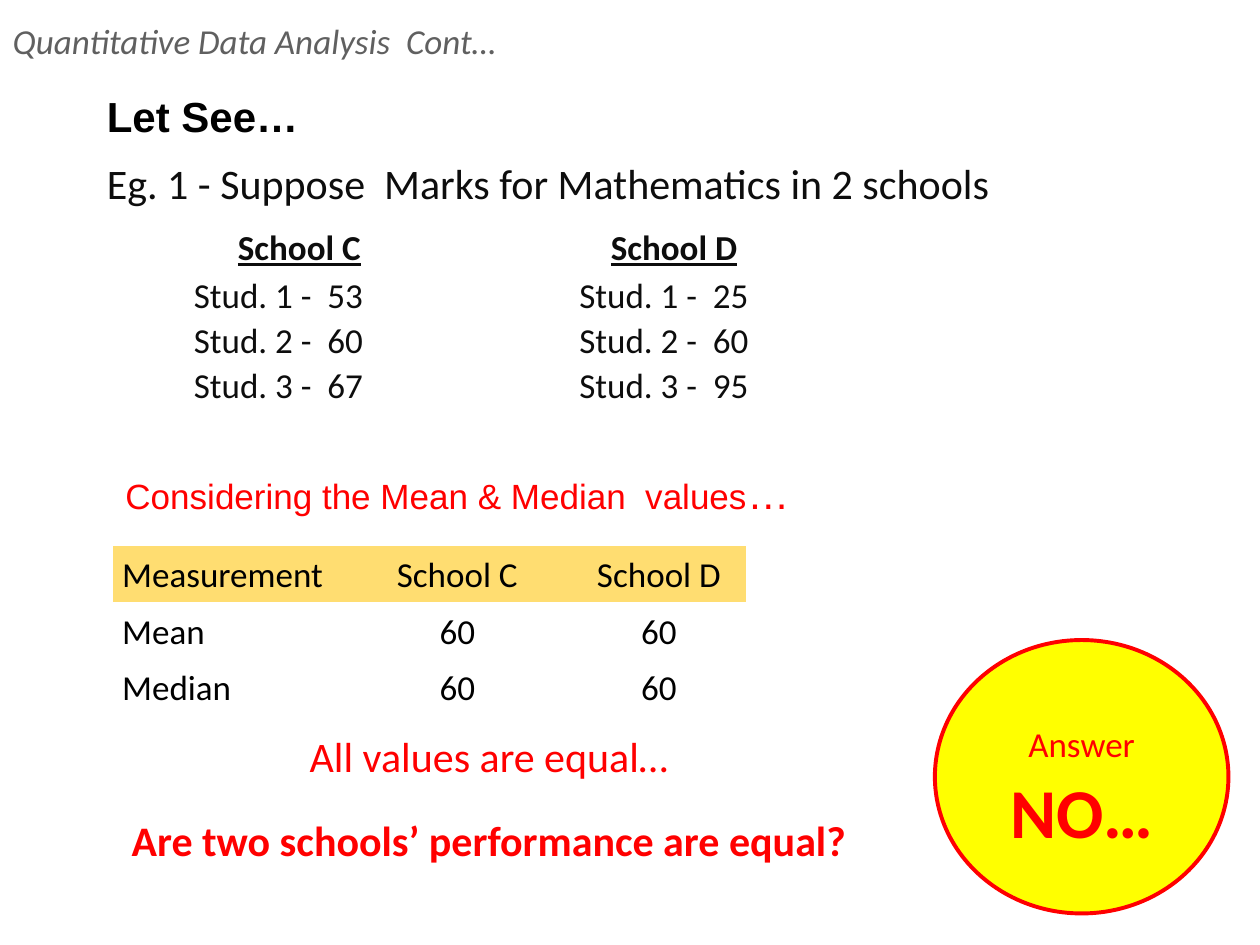
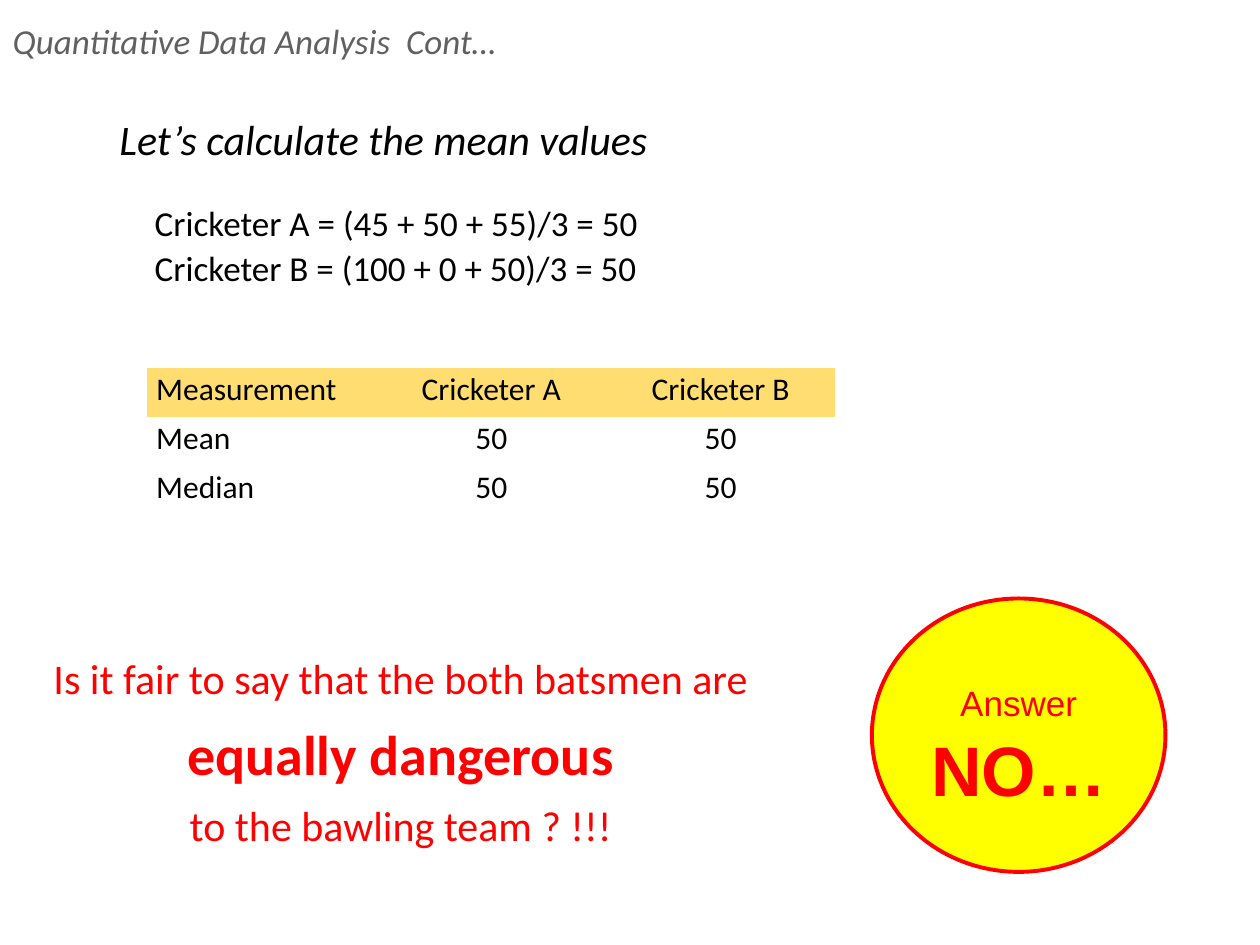
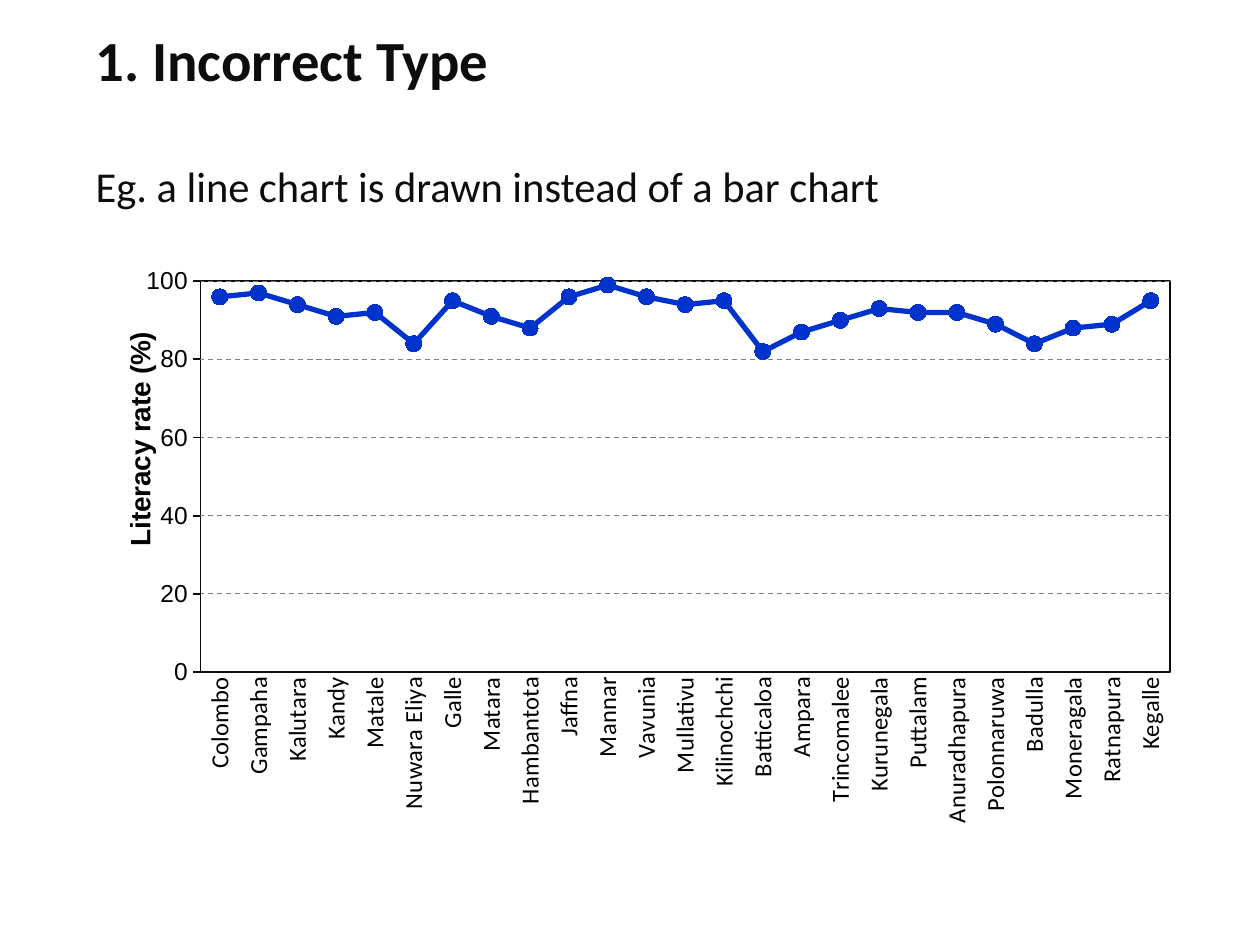
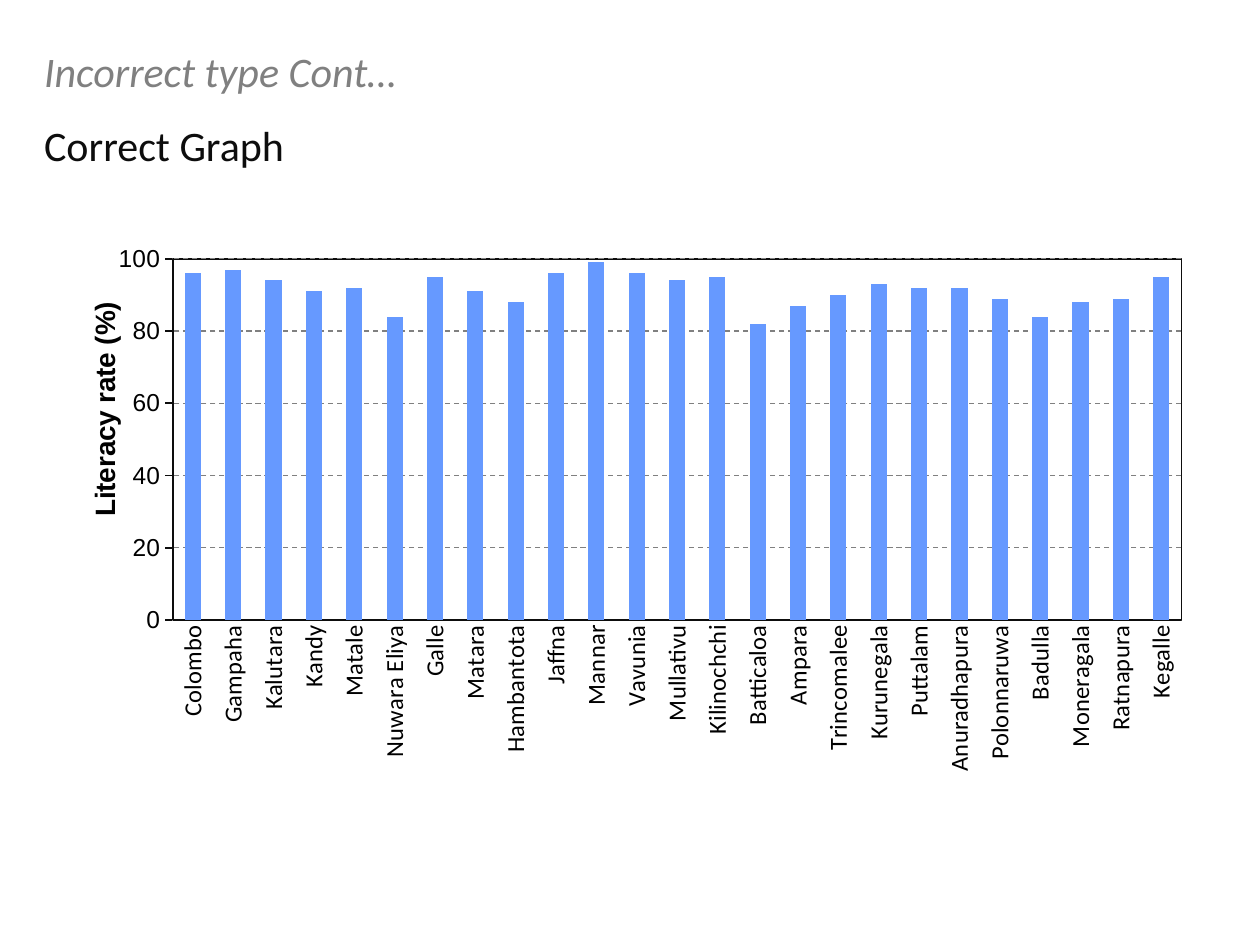
from dataclasses import dataclass

from lxml import etree
from pptx import Presentation
from pptx.chart.data import CategoryChartData
from pptx.dml.color import RGBColor
from pptx.enum.chart import XL_CHART_TYPE, XL_MARKER_STYLE, XL_TICK_MARK
from pptx.enum.dml import MSO_LINE
from pptx.enum.shapes import MSO_SHAPE
from pptx.enum.text import MSO_ANCHOR, MSO_AUTO_SIZE, PP_ALIGN
from pptx.oxml.ns import qn
from pptx.util import Inches, Pt

LEFT, CENTER = PP_ALIGN.LEFT, PP_ALIGN.CENTER
TOP, MIDDLE = MSO_ANCHOR.TOP, MSO_ANCHOR.MIDDLE
NO_AUTOFIT = MSO_AUTO_SIZE.NONE
ELLIPSE, ROUNDED = MSO_SHAPE.OVAL, MSO_SHAPE.ROUNDED_RECTANGLE
LINE_CHART, COLUMN_CHART = XL_CHART_TYPE.LINE_MARKERS, XL_CHART_TYPE.COLUMN_CLUSTERED
CIRCLE = XL_MARKER_STYLE.CIRCLE
TICK_NONE, TICK_OUTSIDE = XL_TICK_MARK.NONE, XL_TICK_MARK.OUTSIDE
DASH = MSO_LINE.DASH

TITLE_ONLY = 5
VERTICAL_TEXT = "-5400000"
SANS, BODY = "Arial", "Calibri"
COLORS = {
    "black": "000000",
    "ink": "0D0D0D",
    "red": "FF0000",
    "yellow": "FFFF00",
    "header": "606060",
    "grey": "808080",
    "table head": "FFDD71",
    "line": "0033CC",
    "column": "6699FF",
}
LITERACY = {
    "Colombo": 96, "Gampaha": 97, "Kalutara": 94, "Kandy": 91, "Matale": 92,
    "Nuwara Eliya": 84, "Galle": 95, "Matara": 91, "Hambantota": 88, "Jaffna": 96,
    "Mannar": 99, "Vavunia": 96, "Mullativu": 94, "Kilinochchi": 95,
    "Batticaloa": 82, "Ampara": 87, "Trincomalee": 90, "Kurunegala": 93,
    "Puttalam": 92, "Anuradhapura": 92, "Polonnaruwa": 89, "Badulla": 84,
    "Moneragala": 88, "Ratnapura": 89, "Kegalle": 95,
}


@dataclass
class Line:
    """One paragraph; spans are (text, font overrides) pairs."""
    spans: list
    size: float
    color: str = "ink"
    font: str = BODY
    bold: bool = False
    italic: bool = False
    align: PP_ALIGN = LEFT
    before: float = 0
    spacing: float = 1.0
    indent: float = 0


def text_line(text, size, **style):
    return Line([(text, {})], size, **style)


def rgb(name):
    return RGBColor.from_string(COLORS[name])


def style_font(font, size, color="black", name=BODY, bold=False, italic=False):
    font.size, font.name, font.bold, font.italic = Pt(size), name, bold, italic
    font.color.rgb = rgb(color)


def fill_paragraph(para, line):
    para.alignment = line.align
    para.line_spacing = line.spacing
    para.space_before = Pt(line.before)
    properties = para._p.get_or_add_pPr()
    properties.set("marL", str(Inches(line.indent)))
    properties.set("indent", "0")
    style_font(para.font, line.size, line.color, line.font, line.bold, line.italic)
    for text, overrides in line.spans:
        span = para.add_run()
        span.text = text
        for attribute, value in overrides.items():
            setattr(span.font, attribute, value)


def fill_frame(frame, lines, anchor=TOP, wrap=True):
    frame.word_wrap = wrap
    frame.auto_size = NO_AUTOFIT
    frame.vertical_anchor = anchor
    for number, line in enumerate(lines):
        para = frame.add_paragraph() if number else frame.paragraphs[0]
        fill_paragraph(para, line)


def add_text(page, place, lines):
    box = page.shapes.add_textbox(*map(Inches, place))
    fill_frame(box.text_frame, lines)


def add_page(deck, place, title_lines):
    page = deck.slides.add_slide(deck.slide_layouts[TITLE_ONLY])
    title = page.shapes.title
    title.left, title.top, title.width, title.height = map(Inches, place)
    fill_frame(title.text_frame, title_lines, MIDDLE)
    return page


def add_analysis_page(deck):
    header = text_line("Quantitative Data Analysis  Cont…", 20, color="header", italic=True)
    return add_page(deck, (0, 0.1, 9, 0.44), [header])


def add_panel(page, preset, place, lines):
    panel = page.shapes.add_shape(preset, *map(Inches, place))
    panel.shadow.inherit = False
    panel.fill.background()
    panel.line.fill.background()
    fill_frame(panel.text_frame, lines, MIDDLE, wrap=False)
    return panel


def add_answer(page, left, top, font):
    style = {"color": "red", "font": font, "align": CENTER}
    circle = add_panel(page, ELLIPSE, (left, top, 2.33, 2.17), [
        text_line("Answer", 20, **style),
        text_line("NO…", 40, bold=True, before=2, **style),
    ])
    circle.text_frame.margin_top = Inches(0.22)
    circle.fill.solid()
    circle.fill.fore_color.rgb = rgb("yellow")
    circle.line.color.rgb = rgb("red")
    circle.line.width = Pt(2.25)


def add_school_marks(page, left, school, heading_indent, marks):
    """Underlined school name over its students' marks."""
    add_text(page, (left, 1.78, 2.5, 1.6), [
        Line([(school, {"underline": True})], 20, bold=True, spacing=0.9,
             indent=heading_indent),
        *(text_line(f"Stud. {student} -  {mark}", 20, spacing=0.9,
                    before=6 if student == 1 else 4)
          for student, mark in enumerate(marks, 1)),
    ])


def clear_borders(cell):
    properties = cell._tc.get_or_add_tcPr()
    for position, side in enumerate("LRTB"):
        border = etree.Element(qn(f"a:ln{side}"), w="0")
        etree.SubElement(border, qn("a:noFill"))
        properties.insert(position, border)


def add_measures(page, left, top, widths, row_height, size, rows, anchor):
    """Table of measurements with a coloured head row."""
    frame = page.shapes.add_table(len(rows), len(widths), Inches(left), Inches(top),
                                  Inches(sum(widths)), Inches(row_height * len(rows)))
    table = frame.table
    table.first_row = table.horz_banding = False
    for column, width in zip(table.columns, widths):
        column.width = Inches(width)
    for row_number, values in enumerate(rows):
        table.rows[row_number].height = Inches(row_height)
        for column_number, value in enumerate(values):
            cell = table.cell(row_number, column_number)
            cell.margin_left = cell.margin_right = Inches(0.07)
            cell.margin_top = cell.margin_bottom = 0
            cell.vertical_anchor = anchor
            if row_number:
                cell.fill.background()
            else:
                cell.fill.solid()
                cell.fill.fore_color.rgb = rgb("table head")
            clear_borders(cell)
            fill_paragraph(cell.text_frame.paragraphs[0], text_line(
                value, size, color="black", spacing=1.07,
                align=CENTER if column_number else LEFT))


def set_layout(parent, position, settings):
    """Give a chart part a manual layout as its child at this position."""
    for old_layout in parent.findall(qn("c:layout")):
        parent.remove(old_layout)
    layout = etree.Element(qn("c:layout"))
    parent.insert(position, layout)
    manual = etree.SubElement(layout, qn("c:manualLayout"))
    for tag, value in settings.items():
        etree.SubElement(manual, qn(f"c:{tag}"), val=str(value))


def set_plot_area(chart, place):
    """Fix the inner plot area, as fractions of the chart, and outline it."""
    plot_area = chart.element.xpath("c:chart/c:plotArea")[0]
    set_layout(plot_area, 0, {"layoutTarget": "inner", "xMode": "edge", "yMode": "edge",
                              **dict(zip("xywh", place))})
    outline = etree.SubElement(etree.SubElement(plot_area, qn("c:spPr")),
                               qn("a:ln"), w=str(Pt(1)))
    fill = etree.SubElement(outline, qn("a:solidFill"))
    etree.SubElement(fill, qn("a:srgbClr"), val=COLORS["ink"])


def style_axes(chart, title_place):
    districts, rates = chart.category_axis, chart.value_axis
    for axis, tick, font in ((districts, TICK_NONE, BODY), (rates, TICK_OUTSIDE, SANS)):
        axis.major_tick_mark = tick
        axis.minor_tick_mark = TICK_NONE
        style_font(axis.tick_labels.font, 14, name=font)
        axis.format.line.color.rgb = rgb("ink")
        axis.format.line.width = Pt(1)
    districts.has_major_gridlines = False
    rates.minimum_scale, rates.maximum_scale, rates.major_unit = 0, 100, 20
    rates.tick_labels.number_format = "#,##0"
    rates.tick_labels.number_format_is_linked = False
    rates.format.line.dash_style = DASH
    rates.has_major_gridlines = True
    grid = rates.major_gridlines.format.line
    grid.color.rgb, grid.width, grid.dash_style = rgb("grey"), Pt(0.75), DASH
    para = rates.axis_title.text_frame.paragraphs[0]
    style_font(para.font, 16, name=SANS, bold=True)
    para.add_run().text = "Literacy rate (%)"
    title = chart.element.xpath(".//c:valAx/c:title")[0]
    set_layout(title, 1, {"xMode": "edge", "yMode": "edge", **dict(zip("xy", title_place))})
    for body in chart.element.xpath(".//c:catAx/c:txPr/a:bodyPr | .//c:valAx/c:title//a:bodyPr"):
        body.set("rot", VERTICAL_TEXT)
        body.set("vert", "horz")


def add_literacy_chart(page, kind, place, plot_place, title_place):
    """Return the plot of a one-series chart of literacy by district."""
    data = CategoryChartData()
    data.categories = list(LITERACY)
    data.add_series("Series 1", list(LITERACY.values()))
    chart = page.shapes.add_chart(kind, *map(Inches, place), data).chart
    chart.has_legend = chart.has_title = False
    style_font(chart.font, 10)
    style_axes(chart, title_place)
    set_plot_area(chart, plot_place)
    plot = chart.plots[0]
    plot.vary_by_categories = False
    return plot


def build_schools(deck):
    page = add_analysis_page(deck)
    add_text(page, (0.75, 1.25, 7.83, 0.5), [
        text_line("Eg. 1 - Suppose  Marks for Mathematics in 2 schools", 24, spacing=0.9)])
    add_school_marks(page, 1.44, "School C", 0.35, (53, 60, 67))
    add_school_marks(page, 4.5, "School D", 0.25, (25, 60, 95))
    add_text(page, (0.75, 0.67, 6.33, 0.5),
             [text_line("Let See…", 24, color="black", font=SANS, bold=True)])
    add_text(page, (0.17, 3.66, 6.92, 0.5), [
        Line([("Considering the Mean & Median  values", {}), ("…", {"size": Pt(24)})],
             20, color="red", font=SANS, align=CENTER)])
    add_answer(page, 7.42, 5.08, BODY)
    add_text(page, (0.42, 5.75, 6.92, 1.17), [
        text_line("All values are equal…", 24, color="red", align=CENTER),
        text_line("Are two schools’ performance are equal?", 24, color="red",
                  bold=True, align=CENTER, before=19),
    ])
    add_measures(page, 0.9, 4.33, (1.82, 1.82, 1.38), 0.45, 20, [
        ("Measurement", "School C", "School D"),
        ("Mean", "60", "60"),
        ("Median", "60", "60"),
    ], MIDDLE)


def build_cricketers(deck):
    page = add_analysis_page(deck)
    sums = {"size": 20, "color": "black", "spacing": 0.9, "indent": 0.38}
    add_text(page, (0.75, 0.9, 8.5, 1.67), [
        text_line("Let’s calculate the mean values", 24, color="black", italic=True,
                  spacing=0.9, indent=0.1),
        text_line("Cricketer A = (45 + 50 + 55)/3 = 50", before=23.5, **sums),
        text_line("Cricketer B = (100 + 0 + 50)/3 = 50", before=4.5, **sums),
    ])
    question = {"color": "red", "align": CENTER, "spacing": 1.25}
    add_panel(page, ROUNDED, (0.39, 4.58, 5.58, 2.67), [
        text_line("Is it fair to say that the both batsmen are", 24, **question),
        text_line("equally dangerous", 32, bold=True, **question),
        text_line("to the bawling team ? !!!", 24, **question),
    ])
    add_answer(page, 6.92, 4.75, SANS)
    add_measures(page, 1.17, 2.92, (1.82, 1.82, 1.82), 0.39, 18, [
        ("Measurement", "Cricketer A", "Cricketer B"),
        ("Mean", "50", "50"),
        ("Median", "50", "50"),
    ], TOP)


def build_incorrect_chart(deck):
    page = add_page(deck, (0.66, 0.21, 8.62, 1.45), [
        text_line("1. Incorrect Type", 32.4, bold=True),
        text_line("Eg. a line chart is drawn instead of a bar chart", 24.3, before=38),
    ])
    plot = add_literacy_chart(page, LINE_CHART, (0.66, 1.92, 8.95, 4.81),
                              (0.104, 0.065, 0.86, 0.645), (0.03, 0.14))
    series = plot.series[0]
    series.smooth = False
    series.format.line.color.rgb = rgb("line")
    series.format.line.width = Pt(3)
    marker = series.marker
    marker.style, marker.size = CIRCLE, 9
    marker.format.fill.solid()
    marker.format.fill.fore_color.rgb = rgb("line")
    marker.format.line.color.rgb = rgb("line")


def build_correct_chart(deck):
    page = add_page(deck, (0.25, 0.25, 10.23, 1.21), [
        text_line("Incorrect type Cont…", 24, color="grey", italic=True),
        text_line("Correct Graph", 24, before=13),
    ])
    plot = add_literacy_chart(page, COLUMN_CHART, (0.42, 1.75, 9.14, 4.68),
                              (0.104, 0.065, 0.876, 0.613), (0.025, 0.13))
    plot.gap_width = 150
    fill = plot.series[0].format.fill
    fill.solid()
    fill.fore_color.rgb = rgb("column")


def main():
    deck = Presentation()
    deck.slide_width, deck.slide_height = Inches(10), Inches(7.5)
    build_schools(deck)
    build_cricketers(deck)
    build_incorrect_chart(deck)
    build_correct_chart(deck)
    deck.save("out.pptx")


if __name__ == "__main__":
    main()
